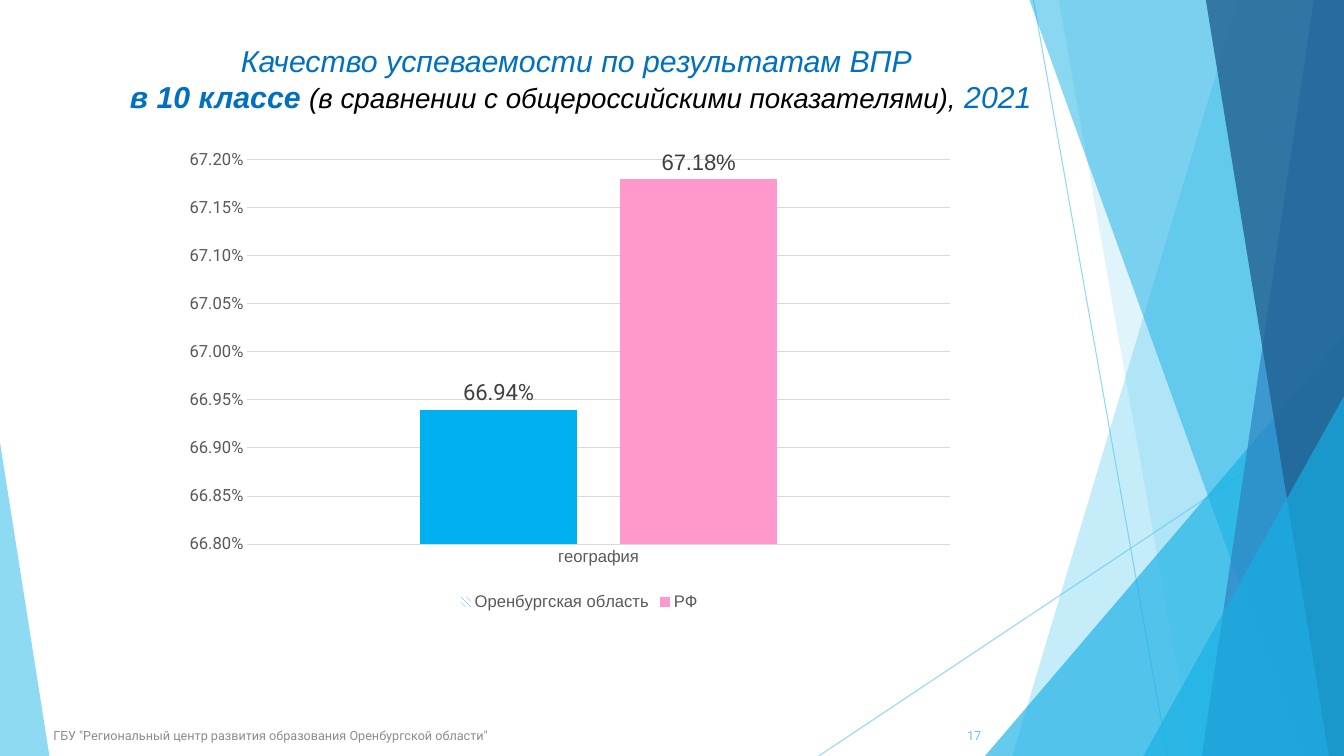
from lxml.etree import Element, SubElement
from pptx import Presentation
from pptx.chart.data import CategoryChartData as ChartData
from pptx.dml.color import RGBColor as RGB
from pptx.enum.chart import XL_CHART_TYPE as CHART, XL_LABEL_POSITION as SPOT
from pptx.enum.chart import XL_LEGEND_POSITION as SIDE, XL_TICK_MARK as TICK
from pptx.enum.dml import MSO_PATTERN as PATTERN
from pptx.enum.shapes import MSO_CONNECTOR as LINK, MSO_SHAPE as SHAPE
from pptx.enum.text import MSO_ANCHOR as ANCHOR, PP_ALIGN as ALIGN
from pptx.oxml.ns import qn
from pptx.util import Inches, Pt

WIDE, HIGH = 13.33, 7.5
COLORS = {
    "sky": "5FCBEF", "cyan": "17B0E4", "blue": "2E83C3", "navy": "226292",
    "title": "0070C0", "black": "000000", "white": "FFFFFF", "foot": "8C8C8C",
    "axis": "595959", "label": "404040", "grid": "D9D9D9",
    "region": "00B0F0", "nation": "FF99CC",
}
PERCENT = "0.00%"


def rgb(name):
    return RGB.from_string(COLORS[name])


def fade(shape, alpha):
    """Set the opacity, in percent, of the shape's fill or line colour."""
    color = next(shape.element.spPr.iter(qn("a:srgbClr")))
    SubElement(color, qn("a:alpha")).set("val", str(alpha * 1000))


def style(font, size, color, name="Arial", **more):
    looks = {"size": Pt(size), "name": name, **more}
    for key, value in looks.items():
        setattr(font, key, value)
    font.color.rgb = rgb(color)


class Page:
    """The current slide, with the look of its elements."""

    def __init__(self, deck):
        self.slide = deck.slides.add_slide(deck.slide_layouts[6])
        self.shapes = self.slide.shapes
        self.slide.background.fill.solid()
        self.slide.background.fill.fore_color.rgb = rgb("white")

    def paint(self, shape, color, alpha):
        shape.shadow.inherit = False
        shape.fill.solid()
        shape.fill.fore_color.rgb = rgb(color)
        shape.line.fill.background()
        fade(shape, alpha)

    def line(self, *ends):
        line = self.shapes.add_connector(LINK.STRAIGHT, *map(Inches, ends))
        line.line.width = Pt(0.75)
        line.line.color.rgb = rgb("sky")
        fade(line, 70)
        SubElement(line.element.spPr, qn("a:effectLst"))

    def band(self, top, foot, color, alpha):
        """Fill from a slanted left edge to the right side of the slide."""
        corners = [(WIDE, 0), (WIDE, HIGH), (foot, HIGH)]
        form = self.shapes.build_freeform(Inches(top), 0)
        form.add_line_segments([(Inches(x), Inches(y)) for x, y in corners])
        self.paint(form.convert_to_shape(), color, alpha)

    def wedge(self, left, top, width, peak, color, alpha):
        """Stand a triangle on the bottom edge; peak is 0 (left) to 1 (right)."""
        box = map(Inches, (left, top, width, HIGH - top))
        shape = self.shapes.add_shape(SHAPE.ISOSCELES_TRIANGLE, *box)
        shape.adjustments[0] = peak
        self.paint(shape, color, alpha)

    def text(self, box, lines, align=ALIGN.LEFT, anchor=ANCHOR.MIDDLE):
        """Write lines of (words, format) runs in one paragraph."""
        frame = self.shapes.add_textbox(*map(Inches, box)).text_frame
        frame.word_wrap = True
        frame.vertical_anchor = anchor
        para = frame.paragraphs[0]
        para.alignment = align
        for row, runs in enumerate(lines):
            if row:
                para.add_line_break()
            for words, look in runs:
                run = para.add_run()
                run.text = words
                style(run.font, **look)

    def chart(self, box, cats, rows, plot_box):
        data = ChartData(number_format=PERCENT)
        data.categories = cats
        for name, values, *_ in rows:
            data.add_series(name, values)
        chart = self.shapes.add_chart(
            CHART.COLUMN_CLUSTERED, *map(Inches, box), data).chart
        style(chart.font, 10, "black", "Roboto")
        chart.has_title = False
        chart.has_legend = True
        chart.legend.position = SIDE.BOTTOM
        chart.legend.include_in_layout = False
        style(chart.legend.font, 12, "axis")
        self.axes(chart)
        plot = chart.plots[0]
        plot.gap_width, plot.overlap = 219, -27
        plot.vary_by_categories = False
        for bar, (_, _, color, font) in zip(plot.series, rows):
            bar.format.fill.solid()
            bar.format.fill.fore_color.rgb = rgb(color)
            labels = bar.data_labels
            looks = {"show_value": True, "position": SPOT.OUTSIDE_END,
                     "number_format": PERCENT, "number_format_is_linked": False}
            for key, value in looks.items():
                setattr(labels, key, value)
            style(labels.font, 16, "label", font)
        self.place(chart, plot_box)
        return plot

    def axes(self, chart):
        cat, val = chart.category_axis, chart.value_axis
        for axis, font in ((cat, "Arial"), (val, "Roboto")):
            axis.major_tick_mark = axis.minor_tick_mark = TICK.NONE
            style(axis.tick_labels.font, 12, "axis", font)
        looks = {"minimum_scale": 0.668, "maximum_scale": 0.672,
                 "major_unit": 0.0005, "has_major_gridlines": True}
        for key, value in looks.items():
            setattr(val, key, value)
        val.tick_labels.number_format = PERCENT
        val.tick_labels.number_format_is_linked = False
        val.format.line.fill.background()
        for line in (cat.format.line, val.major_gridlines.format.line):
            line.color.rgb = rgb("grid")
            line.width = Pt(0.75)

    def place(self, chart, box):
        """Fix the inner plot area as fractions of the chart."""
        area = next(chart.element.iter(qn("c:plotArea")))
        for old in area.findall(qn("c:layout")):
            area.remove(old)
        layout = Element(qn("c:layout"))
        area.insert(0, layout)
        manual = SubElement(layout, qn("c:manualLayout"))
        parts = {"layoutTarget": "inner", "xMode": "edge", "yMode": "edge",
                 **dict(zip("xywh", box))}
        for tag, value in parts.items():
            SubElement(manual, qn("c:" + tag)).set("val", str(value))


def main():
    deck = Presentation()
    deck.slide_width, deck.slide_height = Inches(WIDE), Inches(HIGH)
    page = Page(deck)

    page.line(10.25, 0, 11.58, HIGH)
    page.line(WIDE, 4.03, 8.12, HIGH)
    page.band(12.28, 10.04, "sky", 36)
    page.band(10.5, 11.83, "sky", 20)
    page.wedge(9.77, 3.33, 3.56, 1, "cyan", 66)
    page.band(10.21, 12.91, "cyan", 50)
    page.band(13.03, 11.92, "blue", 70)
    page.band(11.96, 13.18, "navy", 80)
    page.wedge(11.34, 3.93, 1.99, 1, "cyan", 66)
    page.wedge(0, 4.39, 0.49, 0, "sky", 70)

    small = {"size": 9, "name": "Roboto"}
    owner = 'ГБУ "Региональный центр развития образования Оренбургской области"'
    page.text((0.43, 7.1, 6.89, 0.4), [[(owner, {**small, "color": "foot"})]])
    page.text((9.08, 7.1, 0.75, 0.4), [[("17", {**small, "color": "sky"})]],
              ALIGN.RIGHT)

    head = {"size": 21.6, "color": "title", "italic": True}
    note = {"size": 19.8, "color": "black", "italic": True}
    page.text((0.43, 0.37, 10.66, 0.75), [
        [("Качество успеваемости по результатам ВПР ", head)],
        [("в 10 классе ", {**head, "bold": True}),
         ("(в сравнении с общероссийскими показателями),", note),
         (" 2021", head)],
    ], ALIGN.CENTER, ANCHOR.TOP)

    plot = page.chart((1.88, 1.4, 7.64, 4.7), ["география"], [
        ("Оренбургская область", [0.6694], "region", "Roboto"),
        ("РФ", [0.6718], "nation", "Arial"),
    ], (0.064, 0.039, 0.923, 0.812))
    region = plot.series[0]
    hatch = region.format.fill
    hatch.patterned()
    hatch.pattern = PATTERN.WIDE_DOWNWARD_DIAGONAL
    hatch.fore_color.rgb, hatch.back_color.rgb = rgb("region"), rgb("white")
    solid = region.points[0].format.fill
    solid.solid()
    solid.fore_color.rgb = rgb("region")

    deck.save("out.pptx")


if __name__ == "__main__":
    main()
